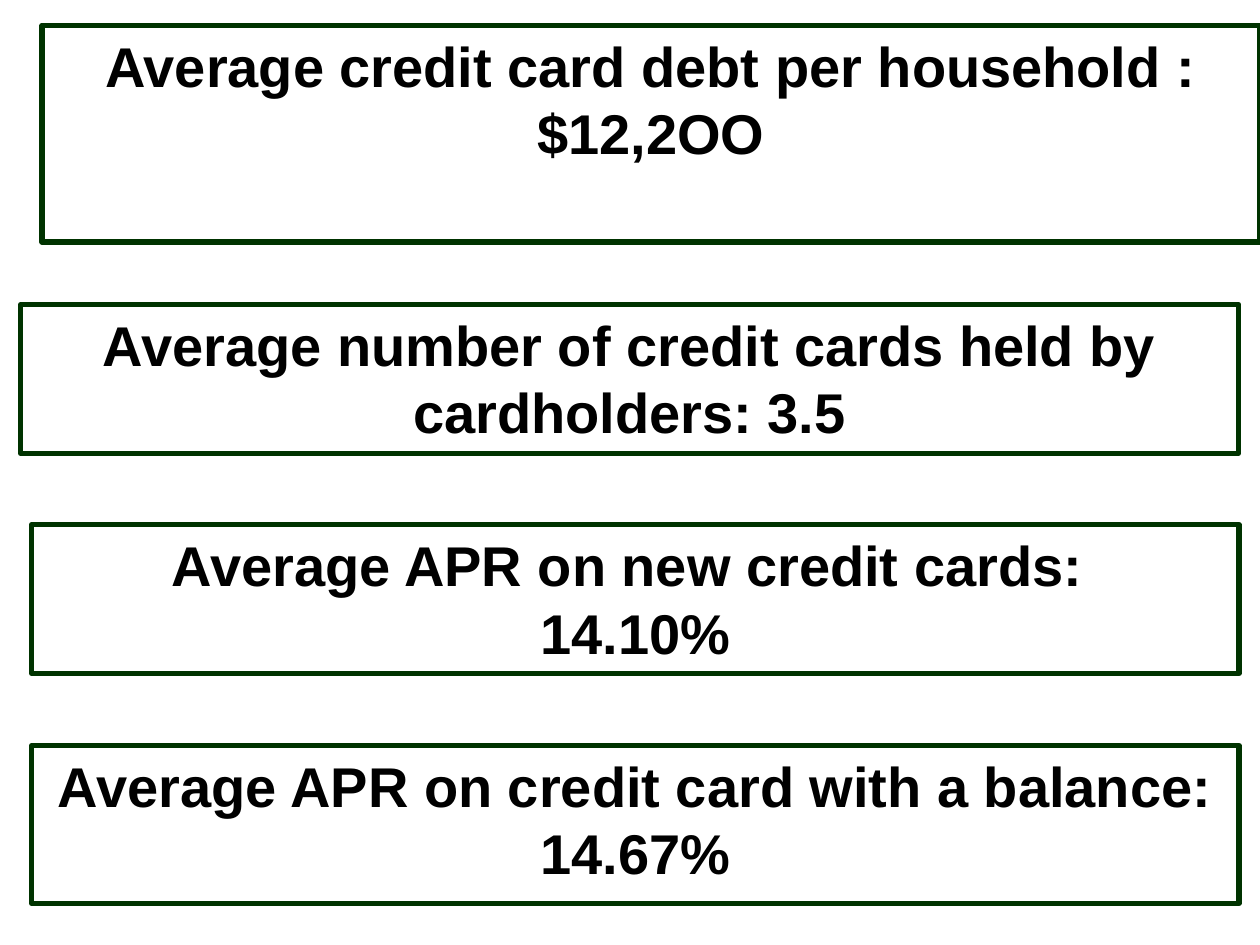
"""Build a slide of four framed credit card facts."""
from typing import NamedTuple

from pptx import Presentation
from pptx import util as u
from pptx.dml.color import RGBColor
from pptx.enum import shapes, text
from pptx.slide import Slide

GREEN = RGBColor(0x00, 0x33, 0x00)
BLACK = RGBColor(0x00, 0x00, 0x00)
WHITE = RGBColor(0xFF, 0xFF, 0xFF)


class Fact(NamedTuple):
    """Hold a frame in centimetres and its lines of text."""
    left: float
    top: float
    width: float
    height: float
    lines: tuple[str, ...]


FACTS = (
    Fact(0.85, 0.51, 24.55, 4.37, ("Average credit card debt per household : $12,2OO",)),
    Fact(0.42, 6.14, 24.55, 3.0, ("Average number of credit cards held by cardholders: 3.5",)),
    Fact(0.64, 10.58, 24.34, 3.0, ("Average APR on new credit cards: ", "14.10%")),
    Fact(0.64, 15.03, 24.34, 3.18, ("Average APR on credit card with a balance: 14.67%",)),
)


def draw(slide: Slide, fact: Fact) -> None:
    """Draw one framed fact."""
    box = slide.shapes.add_shape(
        shapes.MSO_SHAPE.RECTANGLE,
        u.Cm(fact.left), u.Cm(fact.top), u.Cm(fact.width), u.Cm(fact.height),
    )
    box.shadow.inherit = False
    box.fill.background()
    box.line.color.rgb = GREEN
    box.line.width = u.Pt(3)
    frame = box.text_frame
    frame.word_wrap = True
    frame.vertical_anchor = text.MSO_ANCHOR.TOP
    for num, line in enumerate(fact.lines):
        para = frame.add_paragraph() if num else frame.paragraphs[0]
        para.alignment = text.PP_ALIGN.CENTER
        run = para.add_run()
        run.text = line
        font = run.font
        font.name = "Arial"
        font.size = u.Pt(32)
        font.bold = True
        font.color.rgb = BLACK


def main() -> None:
    """Build and save the slide."""
    deck = Presentation()
    deck.slide_width = u.Cm(25.4)
    deck.slide_height = u.Cm(19.05)
    slide = deck.slides.add_slide(deck.slide_layouts[6])
    fill = slide.background.fill
    fill.solid()
    fill.fore_color.rgb = WHITE
    for fact in FACTS:
        draw(slide, fact)
    deck.save("out.pptx")


if __name__ == "__main__":
    main()
